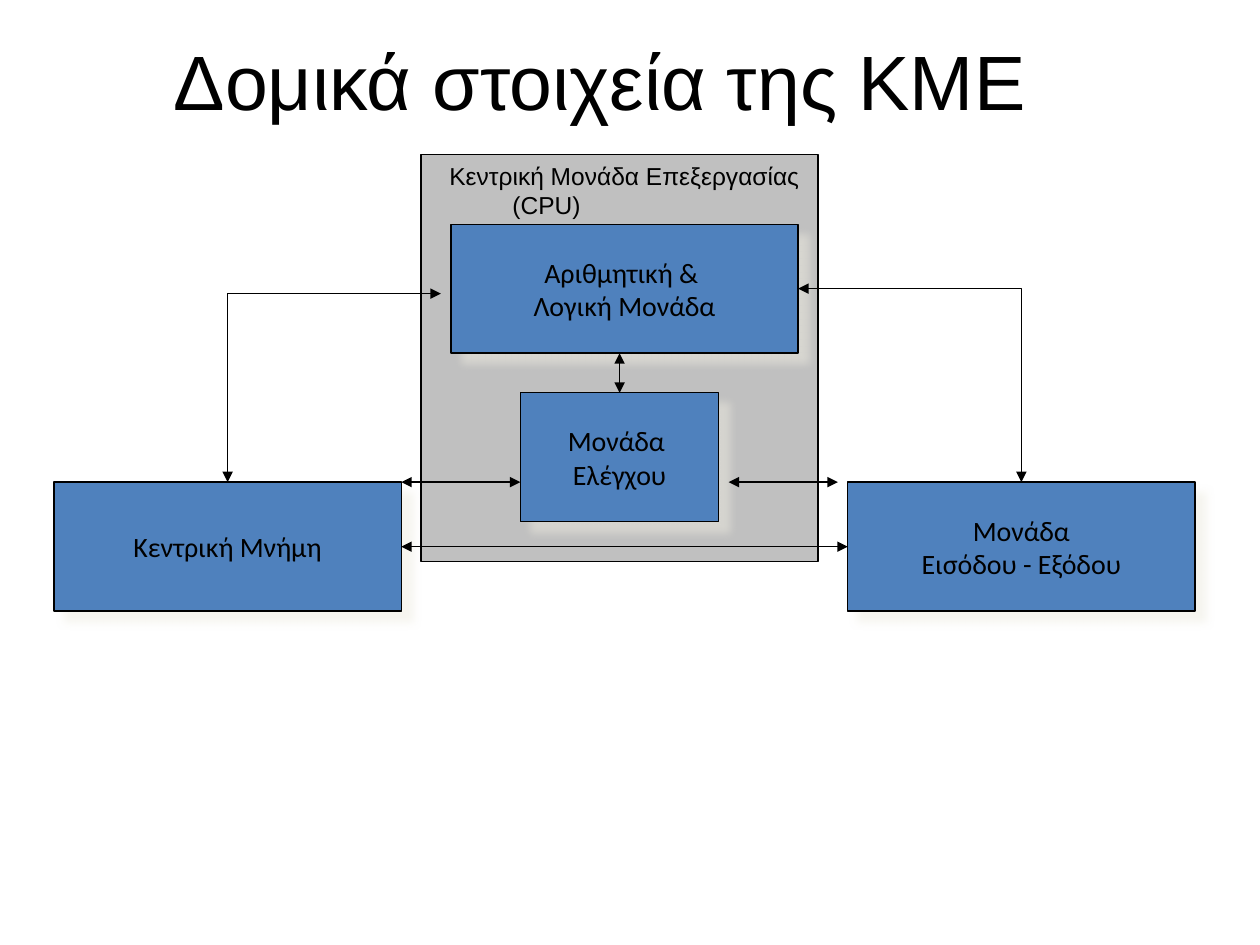
from dataclasses import dataclass

from lxml.etree import SubElement
from pptx import Presentation
from pptx.dml.color import RGBColor
from pptx.enum.shapes import MSO_CONNECTOR as Link, MSO_SHAPE as Shape
from pptx.enum.text import MSO_ANCHOR as Anchor, PP_ALIGN as Align
from pptx.oxml.ns import qn
from pptx.util import Cm, Pt


@dataclass(frozen=True)
class Theme:
    ink: str = "000000"
    unit: str = "4F81BD"
    panel: str = "C0C0C0"
    shadow: str = "EEECE1"
    title_font: str = "Arial"
    unit_font: str = "Calibri"
    title_size: int = 44
    unit_size: int = 16
    label_size: int = 14
    line_width: float = 0.75


THEME = Theme()
UNIT_HEIGHT = 2.6
WIDE, NARROW = 7, 4


def write(frame, lines, *, font, size, align=Align.CENTER, anchor=Anchor.MIDDLE, wrap=False):
    frame.word_wrap = wrap
    frame.vertical_anchor = anchor
    frame.text = "\n".join(lines)
    for paragraph in frame.paragraphs:
        paragraph.alignment = align
        for run in paragraph.runs:
            run.font.name = font
            run.font.size = Pt(size)
            run.font.color.rgb = RGBColor.from_string(THEME.ink)


def add_block(slide, left, top, width, height, fill):
    block = slide.shapes.add_shape(Shape.RECTANGLE, Cm(left), Cm(top), Cm(width), Cm(height))
    block.shadow.inherit = False
    block.fill.solid()
    block.fill.fore_color.rgb = RGBColor.from_string(fill)
    block.line.color.rgb = RGBColor.from_string(THEME.ink)
    block.line.width = Pt(THEME.line_width)
    return block


def cast_shadow(block):
    effects = block._element.spPr.find(qn("a:effectLst"))
    shadow = SubElement(effects, qn("a:outerShdw"), blurRad=str(Pt(5)), dist=str(Pt(8.5)),
                        dir=str(45 * 60000), algn="ctr", rotWithShape="0")
    color = SubElement(shadow, qn("a:srgbClr"), val=THEME.shadow)
    SubElement(color, qn("a:alpha"), val="50000")


def add_unit(slide, left, top, width, lines):
    unit = add_block(slide, left, top, width, UNIT_HEIGHT, THEME.unit)
    cast_shadow(unit)
    write(unit.text_frame, lines, font=THEME.unit_font, size=THEME.unit_size)


def add_arrow(slide, x1, y1, x2, y2):
    """Draw a two-headed arrow; a slanting one runs across first, then down."""
    bent = x1 != x2 and y1 != y2
    arrow = slide.shapes.add_connector(
        Link.ELBOW if bent else Link.STRAIGHT, Cm(x1), Cm(y1), Cm(x2), Cm(y2))
    arrow.line.color.rgb = RGBColor.from_string(THEME.ink)
    arrow.line.width = Pt(THEME.line_width)
    properties = arrow._element.spPr
    if bent:
        properties.find(qn("a:prstGeom")).set("prst", "bentConnector2")
    for end in ("a:headEnd", "a:tailEnd"):
        SubElement(properties.find(qn("a:ln")), qn(end), type="triangle")
    SubElement(properties, qn("a:effectLst"))


def add_title(slide, left, top, width, height):
    title = slide.shapes.title
    title.left, title.top, title.width, title.height = map(Cm, (left, top, width, height))
    write(title.text_frame, ["Δομικά στοιχεία της ΚΜΕ"],
          font=THEME.title_font, size=THEME.title_size, wrap=True)


def add_cpu_label(slide, left, top, width, height):
    label = slide.shapes.add_textbox(Cm(left), Cm(top), Cm(width), Cm(height)).text_frame
    write(label, ["Κεντρική Μονάδα Επεξεργασίας", "(CPU)"], font=THEME.title_font,
          size=THEME.label_size, align=Align.LEFT, anchor=Anchor.TOP)
    label.paragraphs[1]._p.get_or_add_pPr().set("marL", str(Cm(1.27)))


def add_diagram(slide, left, top):
    add_block(slide, left + 7.4, top, 8, 8.2, THEME.panel)
    units = [
        (8, 1.4, WIDE, ["Αριθμητική & ", "Λογική Μονάδα"]),
        (16, 6.6, WIDE, ["Μονάδα", "Εισόδου - Εξόδου"]),
        (0, 6.6, WIDE, ["Κεντρική Μνήμη"]),
        (9.4, 4.8, NARROW, ["Μονάδα ", "Ελέγχου"]),
    ]
    for x, y, width, lines in units:
        add_unit(slide, left + x, top + y, width, lines)
    arrows = [
        (7.8, 2.8, 3.5, 6.6),    # arithmetic unit and memory
        (15, 2.7, 19.5, 6.6),    # arithmetic unit and input/output
        (7, 7.9, 16, 7.9),       # memory and input/output
        (11.4, 4.8, 11.4, 4),    # control and arithmetic units
        (7, 6.6, 9.4, 6.6),      # memory and control unit
        (15.8, 6.6, 13.6, 6.6),  # input/output and control unit
    ]
    for x1, y1, x2, y2 in arrows:
        add_arrow(slide, left + x1, top + y1, left + x2, top + y2)
    add_cpu_label(slide, left + 7.72, top, 7.7, 1.45)


def main():
    deck = Presentation()
    deck.slide_width, deck.slide_height = Cm(25.4), Cm(19.05)
    slide = deck.slides.add_slide(deck.slide_layouts.get_by_name("Title Only"))
    add_title(slide, 2.36, 0.43, 19.48, 2.34)
    add_diagram(slide, 1.09, 3.12)
    deck.save("out.pptx")


if __name__ == "__main__":
    main()
